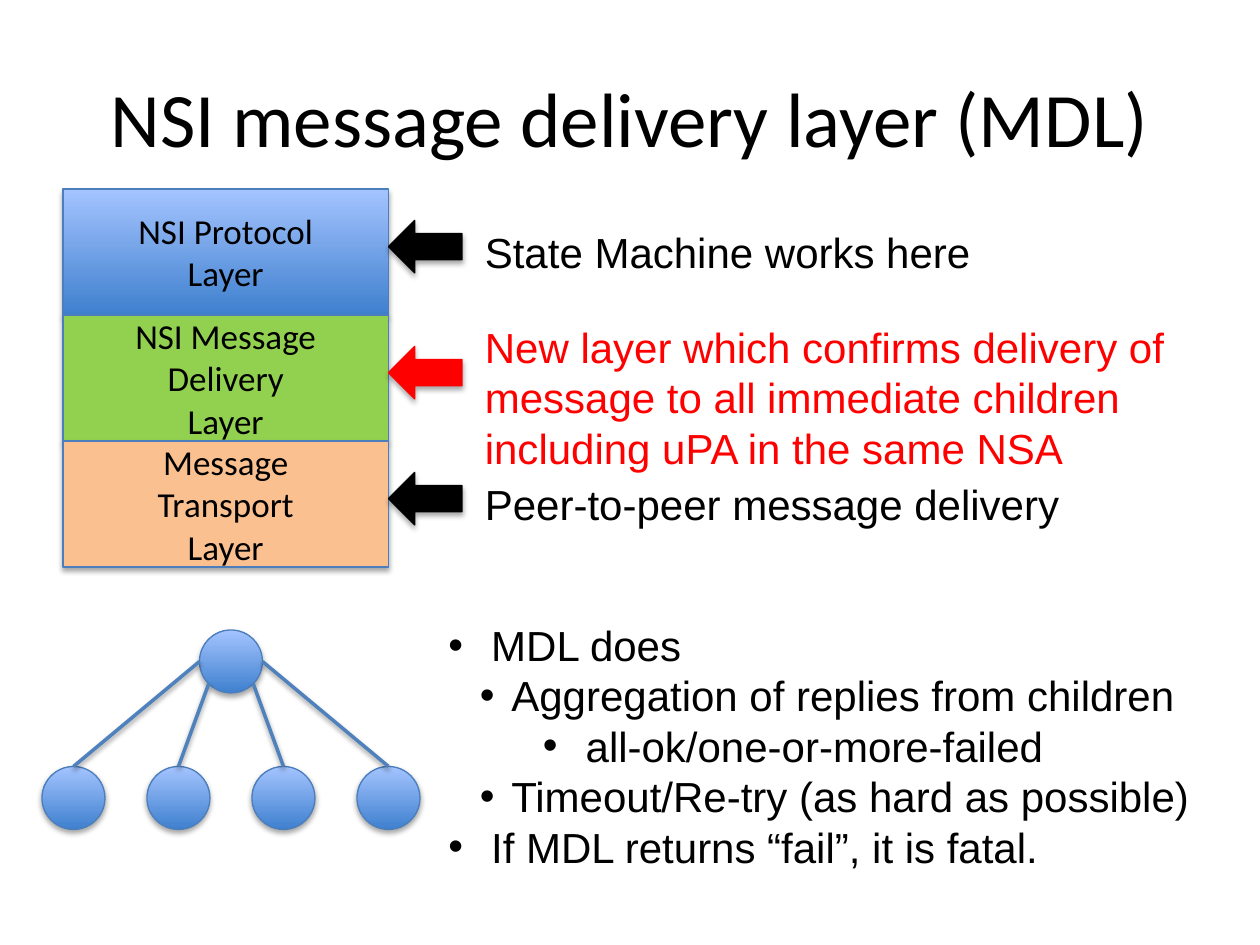
import math

import lxml.etree
import pptx
import pptx.dml.color
import pptx.enum.shapes
import pptx.enum.text
import pptx.oxml.ns
import pptx.util

SHAPE = pptx.enum.shapes.MSO_SHAPE
ALIGN = pptx.enum.text.PP_ALIGN
ANCHOR = pptx.enum.text.MSO_ANCHOR
FIT = pptx.enum.text.MSO_AUTO_SIZE
qn = pptx.oxml.ns.qn

WIDTH, HEIGHT = pptx.util.Inches(10), pptx.util.Inches(7.5)
COLUMNS, ROWS = 120, 90
BLACK, RED, EDGE, BRANCH = "000000", "FF0000", "4B7EBC", "4F81BD"
BLUE = ("3F80CE", "A4C4FF")

LAYERS = [
    (["NSI Protocol", "Layer"], BLUE, BLACK, 3, 6, 49.2, ["State Machine works here"]),
    (["NSI Message", "Delivery", "Layer"], "92D050", RED, 0, 15.7, 67.9,
     ["New layer which confirms delivery of", "message to all immediate children",
      "including uPA in the same NSA"]),
    (["Message", "Transport", "Layer"], "FAC090", BLACK, 3, 6, 57.7,
     ["Peer-to-peer message delivery"]),
]
DUTIES = [
    (0, "MDL does"),
    (1, "Aggregation of replies from children"),
    (2, "all-ok/one-or-more-failed"),
    (1, "Timeout/Re-try (as hard as possible)"),
    (0, "If MDL returns “fail”, it is fatal."),
]
INDENTS = [(0.34, 0.34), (0.5, 0.25), (1.09, 0.34)]


def rgb(value):
    """Turn a hex string into a colour."""
    return pptx.dml.color.RGBColor.from_string(value)


def place(left, top, width, height):
    """Turn grid columns and rows into slide lengths."""
    return (int(left * WIDTH / COLUMNS), int(top * HEIGHT / ROWS),
            int(width * WIDTH / COLUMNS), int(height * HEIGHT / ROWS))


def apply(target, values):
    """Set each format value on the target."""
    for key, value in values.items():
        setattr(target, key, value)


def write(frame, lines, size, font, color, align, **frame_format):
    """Fill a text frame with one paragraph for each line."""
    apply(frame, frame_format)
    frame.text = "\n".join(lines)
    for paragraph in frame.paragraphs:
        apply(paragraph, {"alignment": align, "space_before": pptx.util.Pt(0)})
        apply(paragraph.font, {"size": pptx.util.Pt(size), "name": font})
        paragraph.font.color.rgb = rgb(color)


def add_shadow(part, alpha, distance):
    """Give a shape or connector a soft shadow below it."""
    properties = part._element.spPr
    effects = properties.find(qn("a:effectLst"))
    if effects is None:
        effects = lxml.etree.SubElement(properties, qn("a:effectLst"))
    shadow = lxml.etree.SubElement(
        effects, qn("a:outerShdw"), blurRad=str(pptx.util.Pt(3.1)),
        dist=str(pptx.util.Pt(distance)), dir="5400000", rotWithShape="0")
    color = lxml.etree.SubElement(shadow, qn("a:srgbClr"), val=BLACK)
    lxml.etree.SubElement(color, qn("a:alpha"), val=str(alpha * 1000))


def add_block(slide, kind, box, fill, edge):
    """Draw a filled, outlined and shadowed preset shape."""
    block = slide.shapes.add_shape(kind, *place(*box))
    if isinstance(fill, tuple):
        block.fill.gradient()
        block.fill.gradient_angle = 90
        for stop, value in zip(block.fill.gradient_stops, fill):
            stop.color.rgb = rgb(value)
    else:
        block.fill.solid()
        block.fill.fore_color.rgb = rgb(fill)
    block.line.color.rgb = rgb(edge)
    block.line.width = pptx.util.Pt(0.75)
    block.shadow.inherit = False
    add_shadow(block, 35, 1.8)
    return block


def add_title(slide, box):
    """Write the heading in the title placeholder."""
    title = slide.shapes.title
    apply(title, dict(zip(("left", "top", "width", "height"), place(*box))))
    write(title.text_frame, ["NSI message delivery layer (MDL)"], 44, "Calibri", BLACK,
          ALIGN.CENTER, vertical_anchor=ANCHOR.MIDDLE)


def add_stack(slide, box):
    """Stack the protocol layers, each with an arrow and a remark."""
    left, top, width, height = box
    step = height / len(LAYERS)
    for index, (name, fill, accent, drop, tall, wide, remark) in enumerate(LAYERS):
        row = top + index * step
        layer = add_block(slide, SHAPE.RECTANGLE, (left, row, width, step), fill, EDGE)
        write(layer.text_frame, name, 20, "Calibri", BLACK, ALIGN.CENTER,
              vertical_anchor=ANCHOR.MIDDLE, word_wrap=True)
        add_block(slide, SHAPE.LEFT_ARROW, (left + width, row + step / 4, 7, 5),
                  accent, accent)
        note = slide.shapes.add_textbox(*place(left + width + 8, row + drop, wide, tall))
        write(note.text_frame, remark, 24, "Arial", accent, ALIGN.LEFT,
              word_wrap=False, auto_size=FIT.SHAPE_TO_FIT_TEXT)


def add_tree(slide, box, size=6, count=4):
    """Draw a parent node joined to its row of children."""
    left, top, width, height = box
    center, middle, radius = left + width / 2, top + size / 2, size / 2
    add_block(slide, SHAPE.OVAL, (center - radius, top, size, size), BLUE, EDGE)
    gap = (width - size) / (count - 1)
    for index, degrees in enumerate((180, 135, 45, 0)):
        child = add_block(slide, SHAPE.OVAL,
                          (left + index * gap, top + height - size, size, size), BLUE, EDGE)
        angle = math.radians(degrees)
        start = place(center + radius * math.cos(angle),
                      middle + radius * math.sin(angle), 0, 0)[:2]
        branch = slide.shapes.add_connector(
            pptx.enum.shapes.MSO_CONNECTOR.STRAIGHT, *start, *start)
        branch.end_connect(child, 0)
        branch.line.color.rgb = rgb(BRANCH)
        branch.line.width = pptx.util.Pt(2)
        add_shadow(branch, 38, 1.6)


def add_duties(slide, box):
    """List the duties of the delivery layer in the body placeholder."""
    duties = slide.placeholders[1]
    apply(duties, dict(zip(("left", "top", "width", "height"), place(*box))))
    write(duties.text_frame, [text for _, text in DUTIES], 24, "Arial", BLACK, ALIGN.LEFT,
          word_wrap=False, auto_size=FIT.NONE, vertical_anchor=ANCHOR.TOP)
    for paragraph, (level, _) in zip(duties.text_frame.paragraphs, DUTIES):
        paragraph.level = level
        margin, hanging = INDENTS[level]
        properties = paragraph._p.get_or_add_pPr()
        properties.set("marL", str(pptx.util.Inches(margin)))
        properties.set("indent", str(-pptx.util.Inches(hanging)))
        bullet_font = lxml.etree.Element(qn("a:buFont"), typeface="Arial")
        bullet = lxml.etree.Element(qn("a:buChar"), char="•")
        properties.find(qn("a:defRPr")).addprevious(bullet_font)
        bullet_font.addnext(bullet)


def main():
    """Build the slide and save it."""
    deck = pptx.Presentation()
    apply(deck, {"slide_width": WIDTH, "slide_height": HEIGHT})
    slide = deck.slides.add_slide(deck.slide_layouts[1])
    add_title(slide, (6, 3.6, 108, 15))
    add_tree(slide, (4, 60, 36, 19))
    add_stack(slide, (6, 18, 31, 36))
    add_duties(slide, (41.5, 58.4, 75.1, 25.4))
    deck.save("out.pptx")


if __name__ == "__main__":
    main()
